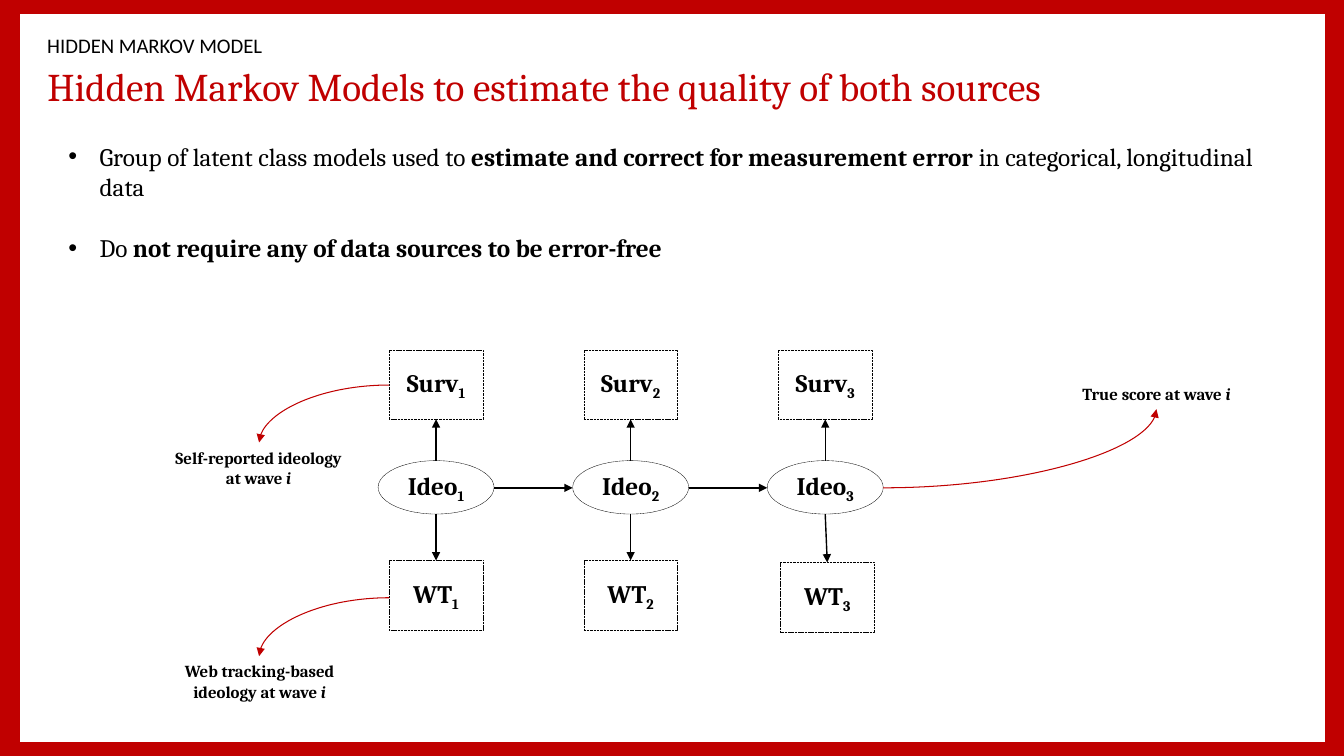
from lxml.etree import SubElement as Sub
from pptx import Presentation
from pptx.dml.color import RGBColor
from pptx.enum.dml import MSO_LINE as Dash
from pptx.enum.shapes import MSO_CONNECTOR as Conn, MSO_SHAPE as Kind
from pptx.enum.text import MSO_ANCHOR as Anchor, MSO_AUTO_SIZE as Fit, PP_ALIGN as Align
from pptx.oxml.ns import qn
from pptx.util import Inches, Pt

RED, BLACK, WHITE = "C00000", "000000", "FFFFFF"
STEP = 1.93  # distance between waves
MID = 4.84  # height of the latent chain


def paint(target, color):
    target.solid()
    target.fore_color.rgb = RGBColor.from_string(color)


def bullet(par):
    props = par._p.get_or_add_pPr()
    props.set("marL", str(Inches(0.31)))
    props.set("indent", str(-Inches(0.31)))
    Sub(props, qn("a:buFont")).set("typeface", "Arial")
    Sub(props, qn("a:buChar")).set("char", "•")


def write(shape, *pars, size=18, font="Cambria", color=BLACK, bold=False,
          align=Align.LEFT, anchor=Anchor.TOP, inset=None, spacing=None,
          gap=0, bullets=False):
    """Fill a shape; a paragraph is a list of (text, marks): b, i, or _ for subscript."""
    frame = shape.text_frame
    frame.word_wrap = True
    frame.auto_size = Fit.NONE
    frame.vertical_anchor = anchor
    if inset is not None:
        frame.margin_left = frame.margin_right = Inches(inset)
        frame.margin_top = frame.margin_bottom = Inches(inset)
    for n, runs in enumerate(pars):
        par = frame.add_paragraph() if n else frame.paragraphs[0]
        if bullets:
            bullet(par)
        par.alignment = align
        if spacing:
            par.line_spacing = spacing
        par.space_before = Pt(gap if n else 0)
        for text, marks in runs:
            run = par.add_run()
            run.text = text
            run.font.name, run.font.size = font, Pt(size)
            run.font.bold = bold or "b" in marks
            run.font.italic = "i" in marks
            paint(run.font.fill, color)
            if "_" in marks:
                run.font._element.set("baseline", "-25000")


def label(slide, box, *pars, **fmt):
    text = slide.shapes.add_textbox(*map(Inches, box))
    write(text, *pars, **fmt)


def panel(slide, kind, box, fill):
    shape = slide.shapes.add_shape(kind, *map(Inches, box))
    shape.shadow.inherit = False
    paint(shape.fill, fill)
    shape.line.fill.background()
    return shape


def node(slide, kind, box, name, wave):
    shape = panel(slide, kind, box, WHITE)
    paint(shape.line.fill, BLACK)
    shape.line.width = Pt(0.25)
    shape.line.dash_style = Dash.SQUARE_DOT
    write(shape, [(name, ""), (str(wave), "_")], bold=True,
          align=Align.CENTER, anchor=Anchor.MIDDLE, inset=0.04)
    return shape


def arrow(slide, start, end, color=BLACK, width=1, curved=False):
    kind = Conn.CURVE if curved else Conn.STRAIGHT
    line = slide.shapes.add_connector(kind, *map(Inches, start + end))
    paint(line.line.fill, color)
    line.line.width = Pt(width)
    Sub(line.line._get_or_add_ln(), qn("a:tailEnd")).set("type", "triangle")
    props = line.element.spPr
    Sub(props, qn("a:effectLst"))
    if curved:
        props.find(qn("a:prstGeom")).set("prst", "curvedConnector2")
    return line


def wave(slide, n):
    """Draw one wave: latent score with its two indicators."""
    left = 3.75 + STEP * n
    nudge = 0.02 if n == 2 else 0
    mid = left + 0.575
    ideo = node(slide, Kind.OVAL, (left, 4.57, 1.15, 0.53), "Ideo", n + 1)
    surv = node(slide, Kind.RECTANGLE, (left + 0.11, 3.47, 0.93, 0.69), "Surv", n + 1)
    track = node(slide, Kind.RECTANGLE,
                 (left + 0.11 + nudge, 5.56 + nudge, 0.93, 0.69), "WT", n + 1)
    up = arrow(slide, (mid, 4.57), (mid, 4.16))
    up.begin_connect(ideo, 0)
    up.end_connect(surv, 2)
    down = arrow(slide, (mid, 5.1), (mid, 5.56))
    down.end_connect(track, 0)
    if n:
        arrow(slide, (left + 1.15 - STEP, MID), (left, MID))


def main():
    deck = Presentation()
    deck.slide_width, deck.slide_height = Inches(13.33), Inches(7.5)
    slide = deck.slides.add_slide(deck.slide_layouts[5])

    panel(slide, Kind.RECTANGLE, (0, 0, 13.33, 7.5), RED)
    panel(slide, Kind.RECTANGLE, (0.2, 0.14, 12.94, 7.22), WHITE)

    title = slide.shapes.title
    slide.shapes.element.append(title.element)  # bring in front of the frame
    title.left, title.top = Inches(0.37), Inches(0.65)
    title.width, title.height = Inches(12.17), Inches(0.47)
    write(title, [("Hidden Markov Models to estimate the quality of both sources", "")],
          size=28, color=RED, anchor=Anchor.MIDDLE, spacing=0.9)
    label(slide, (0.37, 0.32, 11.28, 0.31), [("HIDDEN MARKOV MODEL", "")],
          size=14.8, font="Calibri", anchor=Anchor.MIDDLE, spacing=0.8)
    label(slide, (0.58, 1.35, 12.33, 1.31),
          [("Group of latent class models used to ", ""),
           ("estimate and correct for measurement error ", "b"),
           ("in categorical, longitudinal data", "")],
          [("Do ", ""), ("not require any of data sources to be error-free", "b")],
          gap=22, bullets=True)

    for n in range(3):
        wave(slide, n)

    notes = [
        ("True score at wave ", (10.19, 3.76, 2.56, 0.3), (8.76, MID), (11.47, 4.06)),
        ("Self-reported ideology at wave ", (1.61, 4.39, 1.91, 0.5), (3.86, 3.82), (2.57, 4.39)),
        ("Web tracking-based ideology at wave ", (1.62, 6.51, 1.91, 0.5),
         (3.86, 5.93), (2.57, 6.51)),
    ]
    for text, box, start, end in notes:
        arrow(slide, start, end, RED, 0.75, curved=True)
        label(slide, box, [(text, ""), ("i", "i")], size=12, bold=True, align=Align.CENTER)

    deck.save("out.pptx")


if __name__ == "__main__":
    main()
